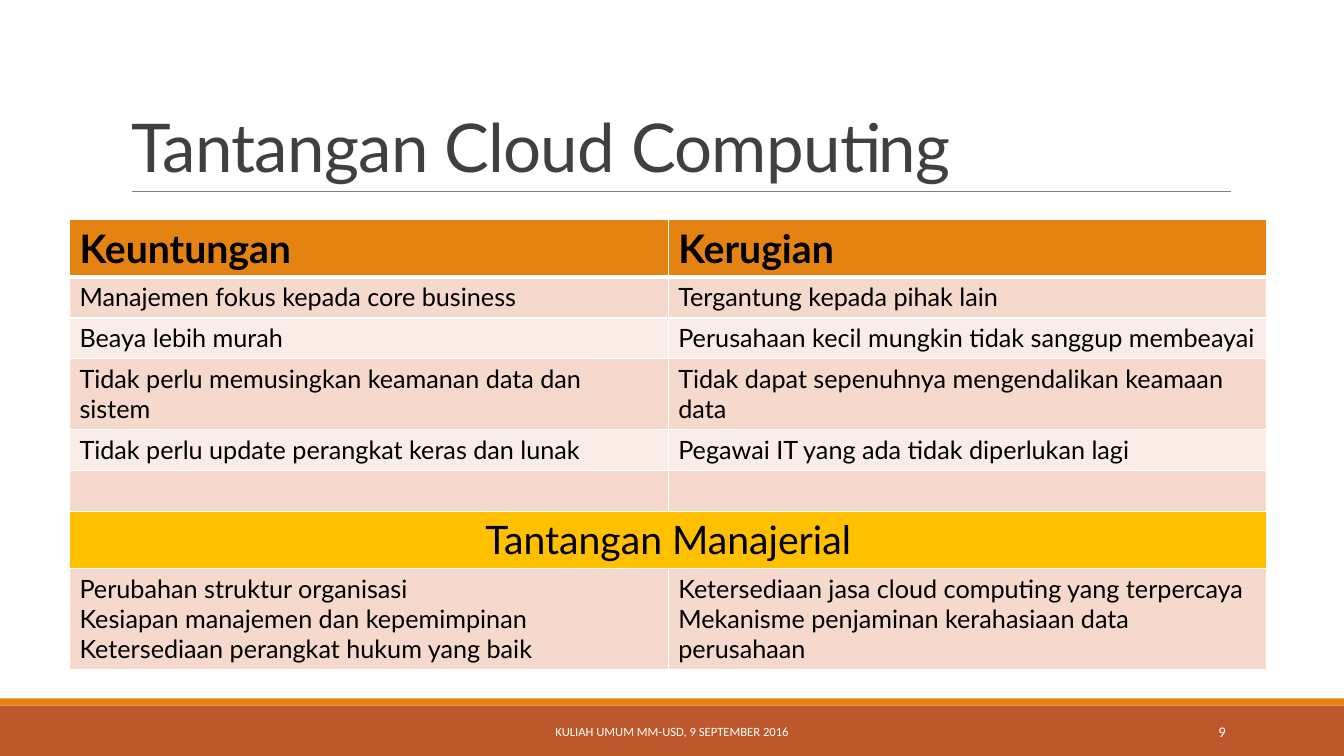
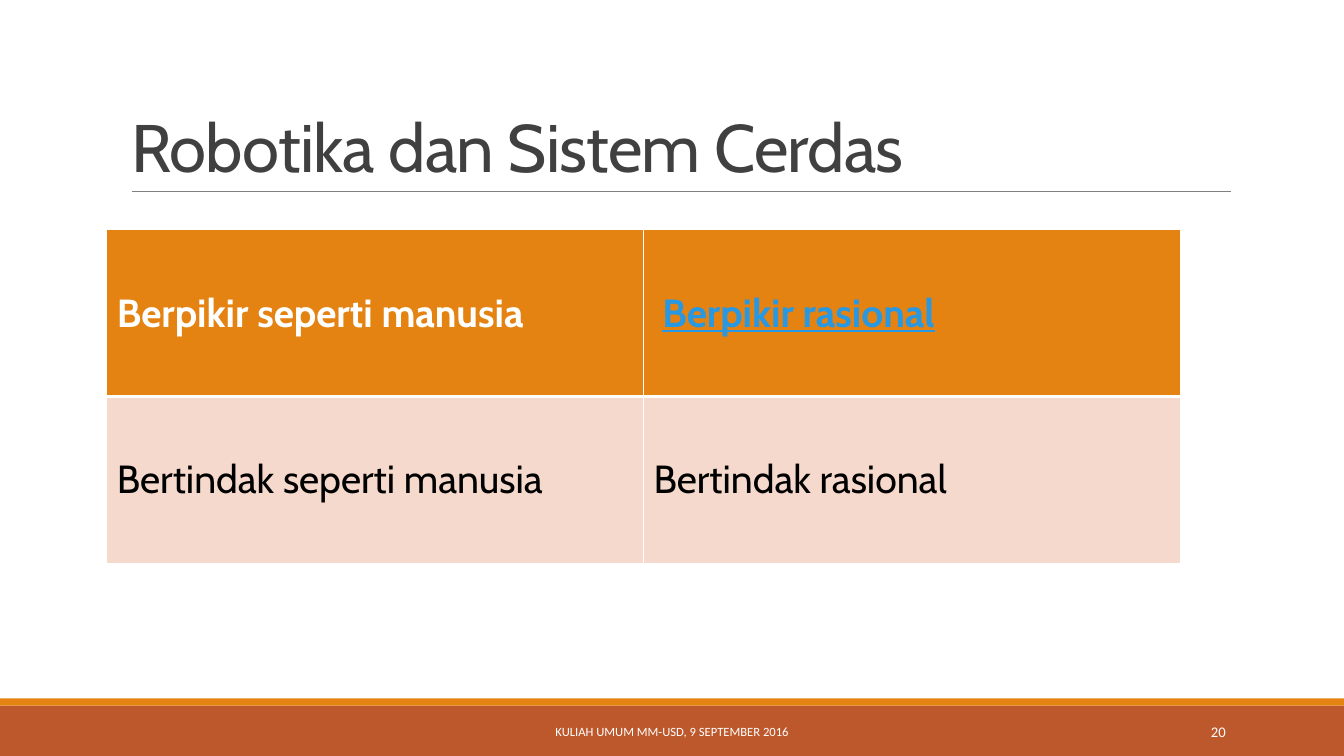
"""Build two lecture slides, each with a title, a table and a shared footer band."""
import pptx
import pptx.dml.color
import pptx.enum.shapes
import pptx.enum.text
import pptx.oxml
import pptx.oxml.ns
import pptx.util

Cm = pptx.util.Cm
Pt = pptx.util.Pt
ALIGN = pptx.enum.text.PP_ALIGN
ANCHOR = pptx.enum.text.MSO_ANCHOR
ORANGE, RUST, GOLD = "E48312", "BD582C", "FFC000"
BAND_DARK, BAND_LIGHT = "F5D9CC", "FAEDE7"
BLACK, WHITE, DARK_GREY, GREY, LINK_BLUE = "000000", "FFFFFF", "404040", "808080", "2998E3"
FOOTER = "KULIAH UMUM MM-USD, 9 SEPTEMBER 2016"


def rgb(color):
    return pptx.dml.color.RGBColor.from_string(color)


def add_run(paragraph, text, font, size, color, bold=False):
    run = paragraph.add_run()
    run.text = text
    run.font.name = font
    run.font.size = Pt(size)
    run.font.bold = bold
    run.font.color.rgb = rgb(color)
    return run


cloud_rows = [
    (ORANGE, 28, BLACK, True, ["Keuntungan", "Kerugian"]),
    (BAND_DARK, 18, BLACK, False,
     ["Manajemen fokus kepada core business", "Tergantung kepada pihak lain"]),
    (BAND_LIGHT, 18, BLACK, False,
     ["Beaya lebih murah", "Perusahaan kecil mungkin tidak sanggup membeayai"]),
    (BAND_DARK, 18, BLACK, False,
     ["Tidak perlu memusingkan keamanan data dan sistem",
      "Tidak dapat sepenuhnya mengendalikan keamaan data"]),
    (BAND_LIGHT, 18, BLACK, False,
     ["Tidak perlu update perangkat keras dan lunak",
      "Pegawai IT yang ada tidak diperlukan lagi"]),
    (BAND_DARK, 18, BLACK, False, ["", ""]),
    (GOLD, 28, BLACK, False, ["Tantangan Manajerial"]),
    (BAND_DARK, 18, BLACK, False,
     ["Perubahan struktur organisasi\nKesiapan manajemen dan kepemimpinan\n"
      "Ketersediaan perangkat hukum yang baik",
      "Ketersediaan jasa cloud computing yang terpercaya\n"
      "Mekanisme penjaminan kerahasiaan data perusahaan"]),
]
robot_rows = [
    (ORANGE, 28, WHITE, True, ["Berpikir seperti manusia", ""]),
    (BAND_DARK, 28, BLACK, False, ["Bertindak seperti manusia", "Bertindak rasional"]),
]
topics = [
    ("Tantangan Cloud Computing", "9", "Lato", cloud_rows, (1.75, 5.54, 30.18), 1.03, ANCHOR.TOP),
    ("Robotika dan Sistem Cerdas", "20", "Cabin", robot_rows, (2.69, 5.79, 27.05), 4.2, ANCHOR.MIDDLE),
]

deck = pptx.Presentation()
deck.slide_width, deck.slide_height = Cm(33.87), Cm(19.05)

for heading, number, font, rows, (left, top, width), row_height, anchor in topics:
    slide = deck.slides.add_slide(deck.slide_layouts[5])

    for band_top, band_height, color in [(17.78, 1.27, RUST), (17.6, 0.18, ORANGE)]:
        band = slide.shapes.add_shape(
            pptx.enum.shapes.MSO_SHAPE.RECTANGLE,
            0, Cm(band_top), deck.slide_width, Cm(band_height))
        band.shadow.inherit = False
        band.fill.solid()
        band.fill.fore_color.rgb = rgb(color)
        band.line.fill.background()

    rule = slide.shapes.add_connector(
        pptx.enum.shapes.MSO_CONNECTOR.STRAIGHT, Cm(3.33), Cm(4.83), Cm(31.01), Cm(4.83))
    rule.line.color.rgb = rgb(GREY)
    rule.line.width = Pt(0.5)
    rule.element.spPr.append(pptx.oxml.parse_xml(
        f"<a:effectLst {pptx.oxml.ns.nsdecls('a')}/>"))

    title = slide.shapes.title
    title.left, title.top, title.width, title.height = Cm(3.05), Cm(0.79), Cm(27.94), Cm(4.04)
    title.text_frame.vertical_anchor = ANCHOR.BOTTOM
    title.text_frame.auto_size = pptx.enum.text.MSO_AUTO_SIZE.NONE
    title_line = title.text_frame.paragraphs[0]
    title_line.alignment = ALIGN.LEFT
    title_line.line_spacing = 0.85
    add_run(title_line, heading, font, 48, DARK_GREY)
    for properties in title.element.iter(pptx.oxml.ns.qn("a:rPr")):
        properties.set("spc", "-50")

    for text, size, note_left, note_width, alignment in [
            (FOOTER, 9, 10.24, 13.39, ALIGN.CENTER), (number, 10.5, 27.51, 3.63, ALIGN.RIGHT)]:
        note = slide.shapes.add_textbox(Cm(note_left), Cm(17.93), Cm(note_width), Cm(1.02))
        note.text_frame.word_wrap = True
        note.text_frame.vertical_anchor = ANCHOR.MIDDLE
        note_line = note.text_frame.paragraphs[0]
        note_line.alignment = alignment
        add_run(note_line, text, "Calibri", size, WHITE)

    table = slide.shapes.add_table(
        len(rows), 2, Cm(left), Cm(top), Cm(width), Cm(row_height * len(rows))).table
    for row_index, (fill, size, color, bold, texts) in enumerate(rows):
        table.rows[row_index].height = Cm(row_height)
        for column in range(2):
            cell = table.cell(row_index, column)
            cell.vertical_anchor = anchor
            cell_properties = cell._tc.get_or_add_tcPr()
            for side in "LRTB":
                heavy = (row_index, side) in [(0, "B"), (1, "T")]
                cell_properties.append(pptx.oxml.parse_xml(
                    f'<a:ln{side} {pptx.oxml.ns.nsdecls("a")} w="{Pt(3 if heavy else 1)}">'
                    f'<a:solidFill><a:srgbClr val="{WHITE}"/></a:solidFill></a:ln{side}>'))
            cell.fill.solid()
            cell.fill.fore_color.rgb = rgb(fill)
        if len(texts) == 1:
            table.cell(row_index, 0).merge(table.cell(row_index, 1))
            table.cell(row_index, 0).text_frame.paragraphs[0].alignment = ALIGN.CENTER
        for column, text in enumerate(texts):
            frame = table.cell(row_index, column).text_frame
            for line_index, line in enumerate(text.split("\n") if text else []):
                paragraph = frame.add_paragraph() if line_index else frame.paragraphs[0]
                add_run(paragraph, line, font, size, color, bold)

rational = table.cell(0, 1).text_frame.paragraphs[0]
add_run(rational, " ", "Cabin", 28, WHITE, True)
add_run(rational, "Berpikir rasional", "Cabin", 28, LINK_BLUE, True).font.underline = True

deck.save("out.pptx")
